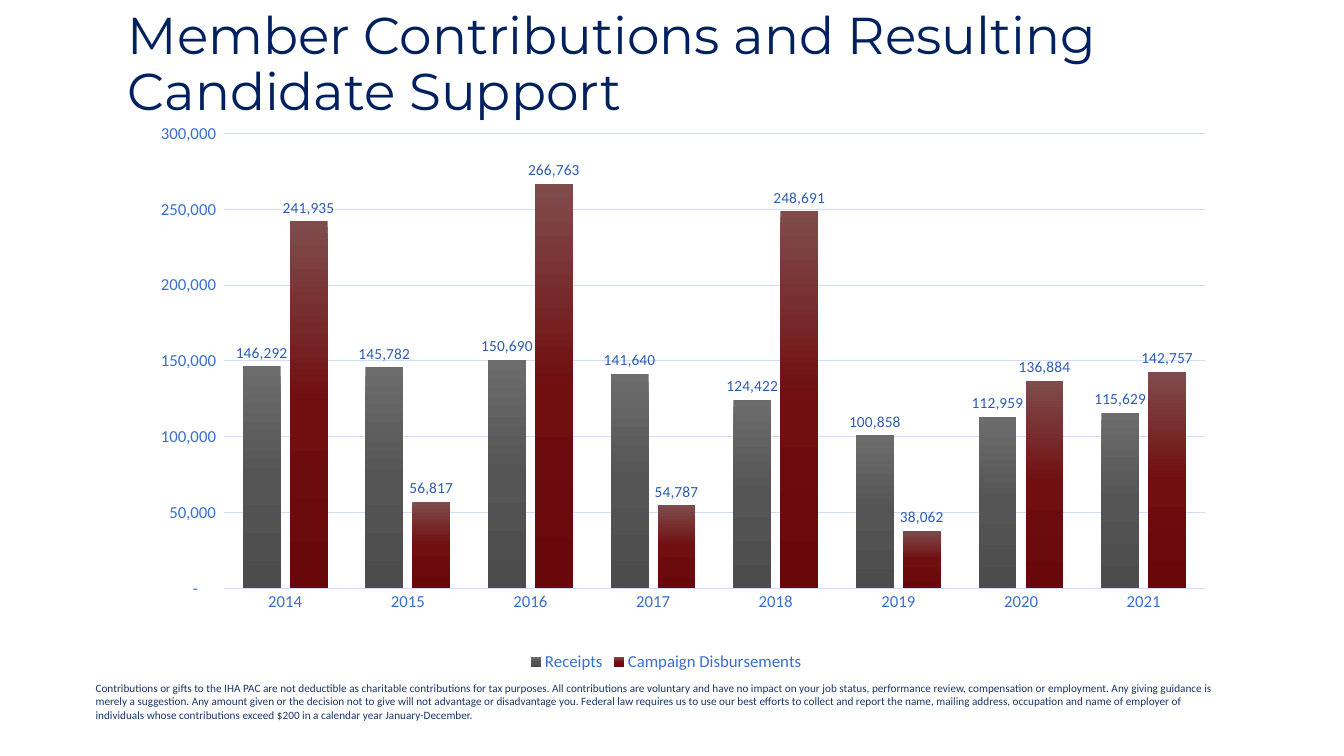
from copy import deepcopy

from lxml.etree import SubElement
from pptx import Presentation
from pptx.chart.data import CategoryChartData
from pptx.dml.color import RGBColor
from pptx.enum.chart import (XL_CHART_TYPE, XL_LABEL_POSITION,
                             XL_LEGEND_POSITION, XL_TICK_MARK)
from pptx.enum.text import MSO_ANCHOR
from pptx.oxml.ns import qn
from pptx.util import Cm, Pt

NAVY = RGBColor(0x00, 0x20, 0x60)
INK = RGBColor(0x1A, 0x36, 0x68)
BLUE = RGBColor(0x39, 0x6F, 0xCE)
LABEL = RGBColor(0x2D, 0x5D, 0xB4)
PALE = RGBColor(0xD1, 0xDE, 0xF4)
GRAYS = [RGBColor(0x6C, 0x6C, 0x6C), RGBColor(0x55, 0x55, 0x55),
         RGBColor(0x4C, 0x4C, 0x4C)]
REDS = [RGBColor(0x7F, 0x4C, 0x4C), RGBColor(0x70, 0x0E, 0x10),
        RGBColor(0x68, 0x08, 0x0A)]

YEARS = [str(year) for year in range(2014, 2022)]
SERIES = [
    ("Receipts", GRAYS,
     [146292, 145782, 150690, 141640, 124422, 100858, 112959, 115629]),
    ("Campaign Disbursements", REDS,
     [241935, 56817, 266763, 54787, 248691, 38062, 136884, 142757]),
]
MONEY = '_(* #,##0_);_(* \\(#,##0\\);_(* "-"??_);_('

TITLE = "Member Contributions and Resulting Candidate Support"
NOTICE = (
    "Contributions or gifts to the IHA PAC are not deductible as charitable "
    "contributions for tax purposes. All contributions are voluntary and have "
    "no impact on your job status, performance review, compensation or "
    "employment. Any giving guidance is merely a suggestion. Any amount given "
    "or the decision not to give will not advantage or disadvantage you. "
    "Federal law requires us to use our best efforts to collect and report "
    "the name, mailing address, occupation and name of employer of "
    "individuals whose contributions exceed $200 in a calendar year "
    "January-December.")


def set_font(font, size, color, name="Calibri"):
    font.name = name
    font.size = Pt(size)
    font.color.rgb = color


def add_text(slide, box, text, size, color, name="Calibri",
             anchor=MSO_ANCHOR.TOP, spacing=None):
    frame = slide.shapes.add_textbox(*map(Cm, box)).text_frame
    frame.word_wrap = True
    frame.vertical_anchor = anchor
    para = frame.paragraphs[0]
    para.line_spacing = spacing
    run = para.add_run()
    run.text = text
    set_font(run.font, size, color, name)


def shade(series, colors):
    """Fill the bars from top to bottom with three evenly spaced colours."""
    fill = series.format.fill
    fill.gradient()
    fill.gradient_angle = 270
    stops = series._element.find(".//" + qn("a:gsLst"))
    stops.insert(1, deepcopy(stops[0]))
    for i, (stop, color) in enumerate(zip(fill.gradient_stops, colors)):
        stop.position = i / 2
        stop.color.rgb = color


def add_labels(series):
    labels = series.data_labels
    labels.show_value = True
    labels.position = XL_LABEL_POSITION.OUTSIDE_END
    labels.number_format = "#,##0"
    labels.number_format_is_linked = False
    set_font(labels.font, 11, LABEL)


def place_plot(chart, x, y, w, h):
    """Fix the inner plot area, in fractions of the chart."""
    area = chart._chartSpace.find(".//" + qn("c:plotArea"))
    layout = area.find(qn("c:layout"))
    if layout is None:
        layout = SubElement(area, qn("c:layout"))
        area.insert(0, layout)
    manual = SubElement(layout, qn("c:manualLayout"))
    parts = [("layoutTarget", "inner"), ("xMode", "edge"), ("yMode", "edge"),
             ("x", x), ("y", y), ("w", w), ("h", h)]
    for tag, val in parts:
        SubElement(manual, qn("c:" + tag)).set("val", str(val))


def style_axes(chart):
    years, money = chart.category_axis, chart.value_axis
    for axis in (years, money):
        axis.major_tick_mark = axis.minor_tick_mark = XL_TICK_MARK.NONE
        set_font(axis.tick_labels.font, 12, BLUE)
    years.format.line.color.rgb = PALE
    years.format.line.width = Pt(1)
    money.format.line.fill.background()
    money.minimum_scale, money.maximum_scale = 0, 300000
    money.major_unit = 50000
    money.tick_labels.number_format = MONEY
    money.tick_labels.number_format_is_linked = False
    grid = money.major_gridlines.format.line
    grid.color.rgb = PALE
    grid.width = Pt(0.75)


def add_bars(slide, box):
    data = CategoryChartData(number_format="#,##0")
    data.categories = YEARS
    for name, _, values in SERIES:
        data.add_series(name, values)
    chart = slide.shapes.add_chart(
        XL_CHART_TYPE.COLUMN_CLUSTERED, *map(Cm, box), data).chart
    chart.has_title = False
    set_font(chart.font, 10, INK)
    style_axes(chart)
    chart.has_legend = True
    chart.legend.position = XL_LEGEND_POSITION.BOTTOM
    chart.legend.include_in_layout = False
    set_font(chart.legend.font, 12, BLUE)
    plot = chart.plots[0]
    plot.vary_by_categories = False
    plot.gap_width = 100
    plot.overlap = -24
    for series, (_, colors, _) in zip(plot.series, SERIES):
        shade(series, colors)
        add_labels(series)
    place_plot(chart, 0.101, 0.037, 0.885, 0.807)


def main():
    deck = Presentation()
    deck.slide_width, deck.slide_height = Cm(33.87), Cm(19.05)
    slide = deck.slides.add_slide(deck.slide_layouts[6])
    add_bars(slide, (2.82, 2.84, 27.94, 14.2))
    add_text(slide, (2.16, 17.04, 28.96, 1.27), NOTICE, 8, INK)
    add_text(slide, (2.97, 0.46, 27.94, 2.39), TITLE, 37, NAVY, "Montserrat",
             MSO_ANCHOR.MIDDLE, 0.9)
    deck.save("out.pptx")


if __name__ == "__main__":
    main()
